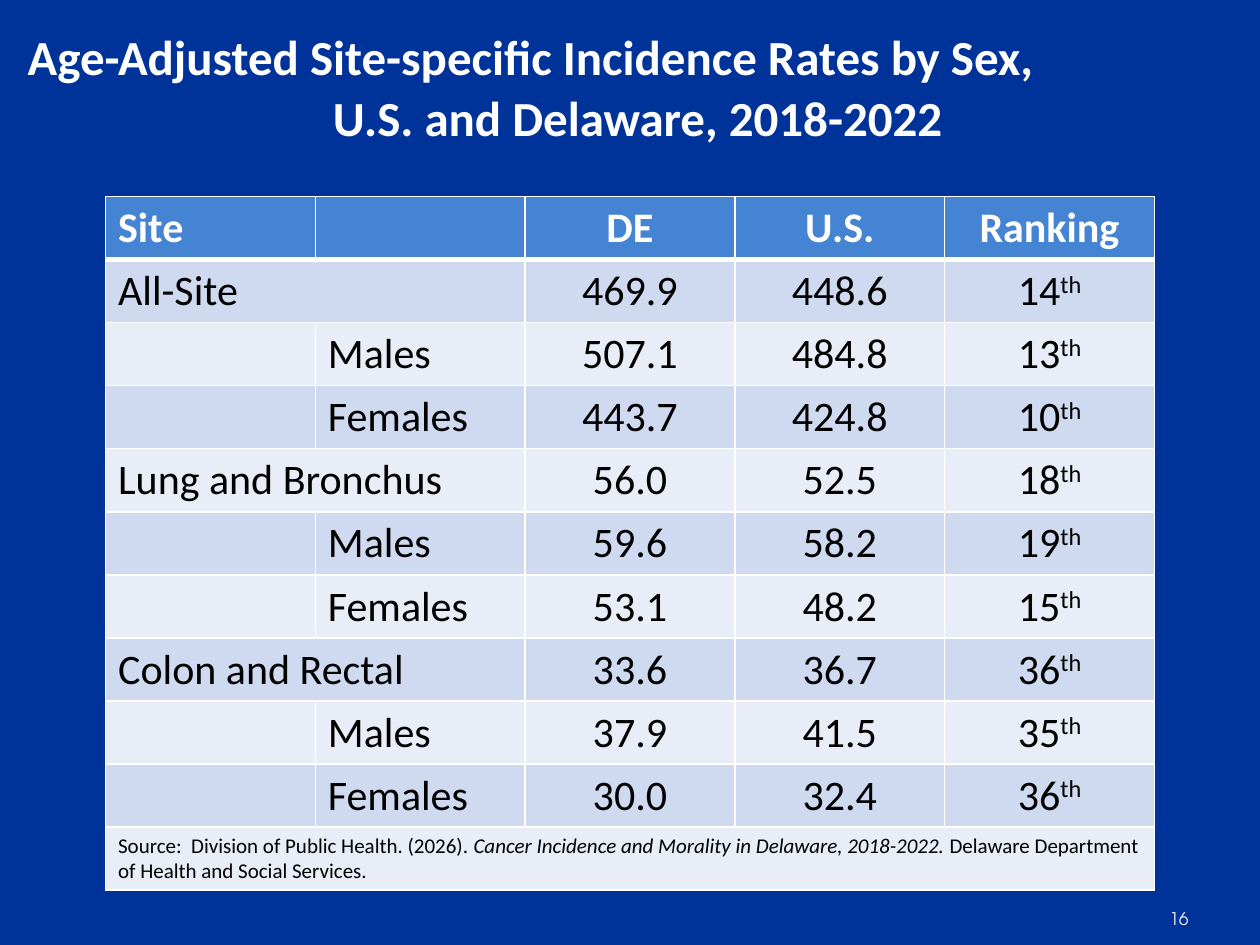
from lxml.etree import SubElement
from pptx import Presentation
from pptx.dml.color import RGBColor
from pptx.enum.text import MSO_ANCHOR, MSO_AUTO_SIZE, PP_ALIGN
from pptx.oxml.ns import qn
from pptx.util import Inches, Pt

WIDTH, HEIGHT = Inches(10), Inches(7.5)
COLS, ROWS = 5, 11
COL, ROW = Inches(1.665), Inches(0.5)
INK = {"back": "003399", "head": "4584D3", "odd": "CFD9EF", "even": "E9EDF7",
       "white": "FFFFFF", "black": "000000", "page": "F2F2F2"}
TITLE = ["Age-Adjusted Site-specific Incidence Rates by Sex,",
         "U.S. and Delaware, 2018-2022"]
HEADS = ["Site", "", "DE", "U.S.", "Ranking"]
RATES = [
    ("All-Site", "", "469.9", "448.6", "14"),
    ("", "Males", "507.1", "484.8", "13"),
    ("", "Females", "443.7", "424.8", "10"),
    ("Lung and Bronchus", "", "56.0", "52.5", "18"),
    ("", "Males", "59.6", "58.2", "19"),
    ("", "Females", "53.1", "48.2", "15"),
    ("Colon and Rectal", "", "33.6", "36.7", "36"),
    ("", "Males", "37.9", "41.5", "35"),
    ("", "Females", "30.0", "32.4", "36"),
]
SOURCE = [("Source:  Division of Public Health. (2026).", False),
          (" Cancer Incidence and Morality in Delaware, 2018-2022. ", True),
          ("Delaware Department of Health and Social Services.", False)]


def color(name):
    """Return the named colour."""
    return RGBColor.from_string(INK[name])


def style(para, size, ink, bold=False, face="Calibri", align=PP_ALIGN.LEFT):
    """Set the font and alignment of a paragraph."""
    para.alignment = align
    font = para.font
    font.name, font.size, font.bold = face, Pt(size), bold
    font.color.rgb = color(ink)


def add_title(slide):
    """Fill the title, with its first line at the left and its second centred."""
    title = slide.shapes.title
    title.left, title.top = 0, Inches(0.01)
    title.width, title.height = WIDTH, Inches(1.33)
    frame = title.text_frame
    frame.word_wrap, frame.auto_size = True, MSO_AUTO_SIZE.NONE
    frame.vertical_anchor = MSO_ANCHOR.MIDDLE
    frame.text = "\n".join(TITLE)
    for para, align in zip(frame.paragraphs, (PP_ALIGN.LEFT, PP_ALIGN.CENTER)):
        style(para, 28, "white", True, align=align)
        para.line_spacing = Pt(35)
    first = frame.paragraphs[0]._p.get_or_add_pPr()
    first.set("marL", str(Inches(0.12)))


def add_page(slide):
    """Write the page number."""
    box = slide.shapes.add_textbox(Inches(9.25), Inches(7.09), Inches(0.61), Inches(0.4))
    frame = box.text_frame
    frame.word_wrap, frame.vertical_anchor = True, MSO_ANCHOR.MIDDLE
    frame.margin_left, frame.margin_right = Inches(0.03), Inches(0.05)
    frame.text = "16"
    style(frame.paragraphs[0], 10, "page", face="TeX Gyre Adventor")


def add_edges(cell, top, bottom):
    """Draw white borders around a cell."""
    props = cell._tc.get_or_add_tcPr()
    for side, width in (("L", 1), ("R", 1), ("T", top), ("B", bottom)):
        line = SubElement(props, qn(f"a:ln{side}"), w=str(Pt(width)))
        fill = SubElement(line, qn("a:solidFill"))
        SubElement(fill, qn("a:srgbClr"), val=INK["white"])


def paint(table):
    """Give each cell its borders and its band colour."""
    for row in range(ROWS):
        band = "head" if row == 0 else ("even", "odd")[row % 2]
        for col in range(COLS):
            cell = table.cell(row, col)
            add_edges(cell, 3 if row == 1 else 1, 3 if row == 0 else 1)
            cell.fill.solid()
            cell.fill.fore_color.rgb = color(band)


def write_row(table, row, words):
    """Write a row of labels, rates and a rank."""
    head = row == 0
    for col, word in enumerate(words):
        if not word:
            continue
        para = table.cell(row, col).text_frame.paragraphs[0]
        para.add_run().text = word
        if col == COLS - 1 and not head:
            mark = para.add_run()
            mark.text = "th"
            mark._r.get_or_add_rPr().set("baseline", "30000")
        align = PP_ALIGN.CENTER if col > 1 else PP_ALIGN.LEFT
        style(para, 24, "white" if head else "black", head, align=align)
    if words[0] and not head:
        table.cell(row, 0).merge(table.cell(row, 1))


def write_source(table):
    """Write the source across the last row."""
    cell = table.cell(ROWS - 1, 0)
    cell.merge(table.cell(ROWS - 1, COLS - 1))
    para = cell.text_frame.paragraphs[0]
    for text, slant in SOURCE:
        run = para.add_run()
        run.text, run.font.italic = text, slant
    style(para, 12, "black")


def add_rates(slide):
    """Build the table of rates."""
    wide = COL * COLS
    frame = slide.shapes.add_table(ROWS, COLS, (WIDTH - wide) // 2, Inches(1.56),
                                   wide, ROW * ROWS)
    table = frame.table
    paint(table)
    for row, words in enumerate([HEADS, *RATES]):
        write_row(table, row, words)
    write_source(table)


def main():
    """Build and save the slide."""
    deck = Presentation()
    deck.slide_width, deck.slide_height = WIDTH, HEIGHT
    slide = deck.slides.add_slide(deck.slide_layouts[5])
    slide.background.fill.solid()
    slide.background.fill.fore_color.rgb = color("back")
    add_title(slide)
    add_page(slide)
    add_rates(slide)
    deck.save("out.pptx")


if __name__ == "__main__":
    main()
